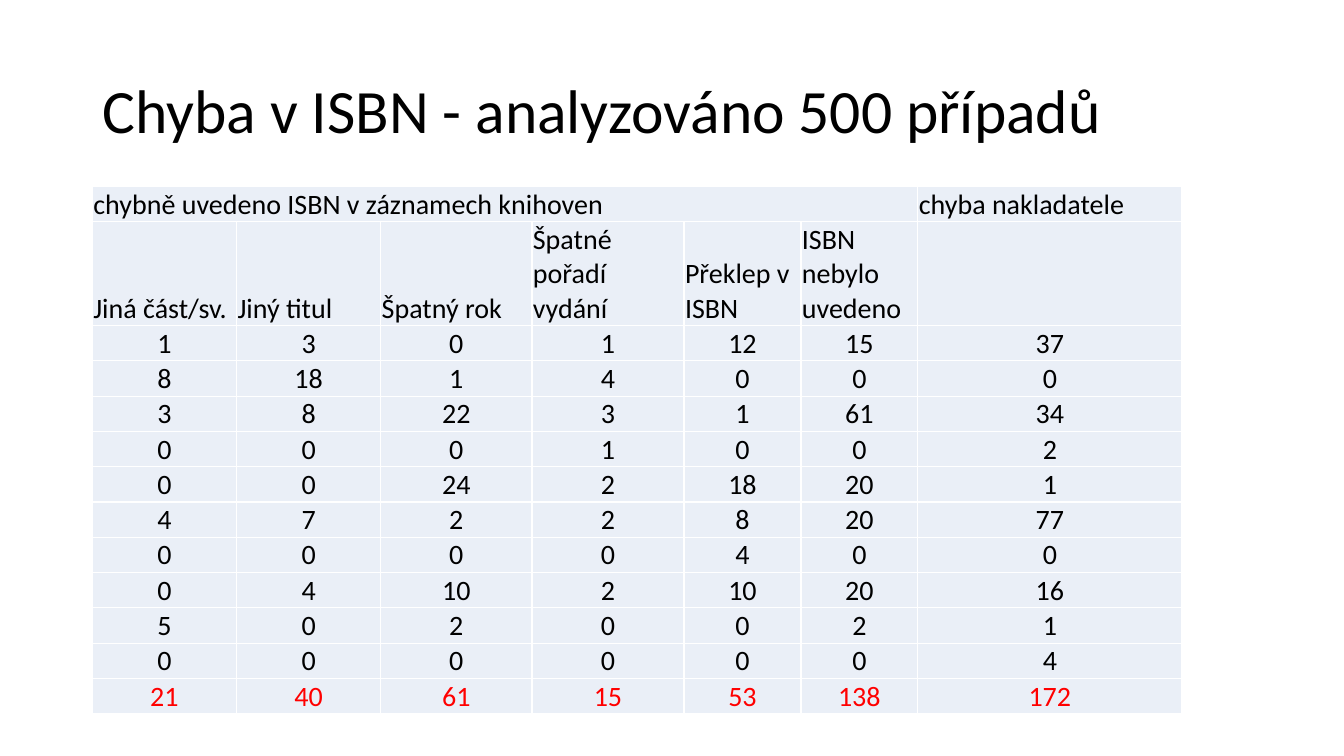
from lxml.etree import SubElement
from pptx import Presentation
from pptx.dml.color import RGBColor
from pptx.enum.text import MSO_ANCHOR, MSO_AUTO_SIZE, PP_ALIGN
from pptx.oxml import parse_xml
from pptx.oxml.ns import nsdecls, qn
from pptx.util import Pt

FONT = "Calibri"
BLACK, RED, WHITE, PALE = "000000", "FF0000", "FFFFFF", "EAEFF7"

COL_WIDTHS = [103, 103, 108, 108.7, 83.5, 83.5, 188.6]
ROW_HEIGHT, HEADER_HEIGHT = 23, 68.4

GROUPS = ["chybně uvedeno ISBN v záznamech knihoven", "", "", "", "", "",
          "chyba nakladatele"]
CAUSES = ["Jiná část/sv.", "Jiný titul", "Špatný rok", "Špatné pořadí vydání",
          "Překlep v ISBN", "ISBN nebylo uvedeno", ""]
COUNTS = [
    [1, 3, 0, 1, 12, 15, 37],
    [8, 18, 1, 4, 0, 0, 0],
    [3, 8, 22, 3, 1, 61, 34],
    [0, 0, 0, 1, 0, 0, 2],
    [0, 0, 24, 2, 18, 20, 1],
    [4, 7, 2, 2, 8, 20, 77],
    [0, 0, 0, 0, 4, 0, 0],
    [0, 4, 10, 2, 10, 20, 16],
    [5, 0, 2, 0, 0, 2, 1],
    [0, 0, 0, 0, 0, 0, 4],
]


def rgb(hex_color):
    return RGBColor.from_string(hex_color)


def set_text(tf, text, size, color, align):
    tf.text = text
    p = tf.paragraphs[0]
    p.alignment = align
    for r in p.runs:
        r.font.name = FONT
        r.font.size = Pt(size)
        r.font.bold = False
        r.font.color.rgb = rgb(color)
    return p


def add_title(s, text):
    sp = s.shapes.title
    sp.left, sp.top, sp.width, sp.height = Pt(66), Pt(28.8), Pt(828), Pt(104.4)
    tf = sp.text_frame
    tf.auto_size = MSO_AUTO_SIZE.NONE
    tf.vertical_anchor = MSO_ANCHOR.MIDDLE
    p = set_text(tf, text, 44, BLACK, PP_ALIGN.LEFT)
    p.line_spacing = 0.9


def set_borders(cell, color, width):
    tcPr = cell._tc.get_or_add_tcPr()
    for i, side in enumerate(("lnL", "lnR", "lnT", "lnB")):
        ln = parse_xml(f'<a:{side} {nsdecls("a")} w="{Pt(width)}"/>')
        fill = SubElement(ln, qn("a:solidFill"))
        SubElement(fill, qn("a:srgbClr"), val=color)
        tcPr.insert(i, ln)


def format_cell(cell, text, color, align):
    cell.margin_left = cell.margin_right = cell.margin_top = Pt(0.7)
    cell.margin_bottom = Pt(0)
    cell.vertical_anchor = MSO_ANCHOR.BOTTOM
    cell.fill.solid()
    cell.fill.fore_color.rgb = rgb(PALE)
    set_borders(cell, WHITE, 1)
    if text:
        set_text(cell.text_frame, text, 20, color, align)


def add_error_table(s):
    totals = [sum(column) for column in zip(*COUNTS)]
    rows = [GROUPS, CAUSES, *COUNTS, totals]
    heights = [ROW_HEIGHT] * len(rows)
    heights[1] = HEADER_HEIGHT
    table = s.shapes.add_table(len(rows), len(COL_WIDTHS), Pt(66), Pt(133.2),
                               Pt(sum(COL_WIDTHS)), Pt(sum(heights))).table
    table.first_row = table.horz_banding = False
    for column, width in zip(table.columns, COL_WIDTHS):
        column.width = Pt(width)
    for i, (row, height) in enumerate(zip(rows, heights)):
        table.rows[i].height = Pt(height)
        align = PP_ALIGN.LEFT if i < 2 else PP_ALIGN.CENTER
        color = RED if row is totals else BLACK
        for j, value in enumerate(row):
            format_cell(table.cell(i, j), str(value), color, align)
    # The library errors share one heading
    table.cell(0, 0).merge(table.cell(0, 5))


def main():
    prs = Presentation()
    prs.slide_width, prs.slide_height = Pt(960), Pt(540)
    s = prs.slides.add_slide(prs.slide_layouts[5])
    add_title(s, "Chyba v ISBN - analyzováno 500 případů")
    add_error_table(s)
    prs.save("out.pptx")


if __name__ == "__main__":
    main()
